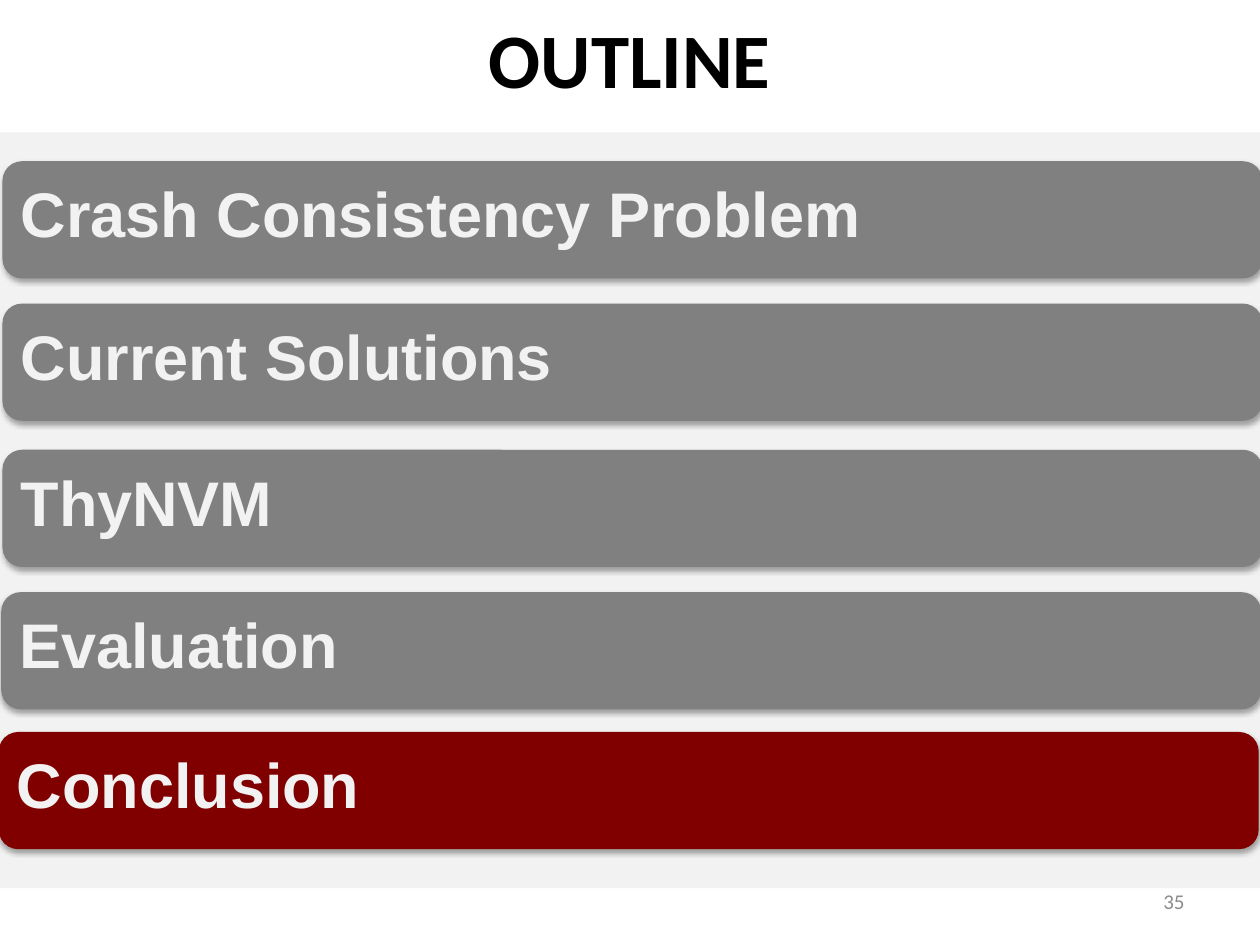
from lxml.etree import SubElement
from pptx import Presentation
from pptx.dml.color import RGBColor
from pptx.enum.shapes import MSO_SHAPE
from pptx.enum.text import MSO_ANCHOR, PP_ALIGN
from pptx.oxml.ns import qn
from pptx.util import Inches, Pt

BLACK = RGBColor(0x00, 0x00, 0x00)
PALE_GRAY = RGBColor(0xF2, 0xF2, 0xF2)
MID_GRAY = RGBColor(0x80, 0x80, 0x80)
NUMBER_GRAY = RGBColor(0x8C, 0x8C, 0x8C)
DARK_RED = RGBColor(0x80, 0x00, 0x00)

SLIDE_WIDTH = 10
BAR_HEIGHT = 0.93

# Topic, left, top, fill
TOPICS = [
    ("Crash Consistency Problem", 0.02, 1.28, MID_GRAY),
    ("Current Solutions", 0.02, 2.41, MID_GRAY),
    ("ThyNVM", 0.02, 3.57, MID_GRAY),
    ("Evaluation", 0.01, 4.7, MID_GRAY),
    ("Conclusion", -0.01, 5.81, DARK_RED),
]


def write_text(shape, text, font_name, size, color, align, bold=False):
    frame = shape.text_frame
    frame.word_wrap = True
    frame.vertical_anchor = MSO_ANCHOR.MIDDLE
    paragraph = frame.paragraphs[0]
    paragraph.text = text
    paragraph.alignment = align
    paragraph.font.name = font_name
    paragraph.font.size = Pt(size)
    paragraph.font.bold = bold
    paragraph.font.color.rgb = color
    return paragraph


def add_label(slide, text, left, top, width, height, **style):
    label = slide.shapes.add_textbox(
        Inches(left), Inches(top), Inches(width), Inches(height))
    write_text(label, text, "Calibri", **style)


def add_block(slide, preset, left, top, height, color):
    block = slide.shapes.add_shape(
        preset, Inches(left), Inches(top), Inches(SLIDE_WIDTH), Inches(height))
    block.shadow.inherit = False
    block.fill.solid()
    block.fill.fore_color.rgb = color
    block.line.fill.background()
    return block


def add_soft_shadow(shape):
    effects = shape._element.spPr.find(qn("a:effectLst"))
    shadow = SubElement(
        effects, qn("a:outerShdw"), blurRad=str(Pt(3.1)), dist=str(Pt(1.8)),
        dir="5400000", rotWithShape="0")
    shadow_color = SubElement(shadow, qn("a:srgbClr"), val=str(BLACK))
    SubElement(shadow_color, qn("a:alpha"), val="35000")


def add_topic_bar(slide, topic, left, top, color):
    bar = add_block(slide, MSO_SHAPE.ROUNDED_RECTANGLE, left, top, BAR_HEIGHT, color)
    add_soft_shadow(bar)
    paragraph = write_text(bar, topic, "Arial", 36, PALE_GRAY, PP_ALIGN.LEFT, bold=True)
    paragraph.line_spacing = 0.8


def main():
    presentation = Presentation()
    presentation.slide_width = Inches(SLIDE_WIDTH)
    presentation.slide_height = Inches(7.5)
    slide = presentation.slides.add_slide(presentation.slide_layouts[6])

    # Backdrop panel, title and page number
    add_block(slide, MSO_SHAPE.RECTANGLE, 0, 1.05, 6, PALE_GRAY)
    add_label(slide, "OUTLINE", 0, -0.17, SLIDE_WIDTH, 1.25,
              size=44, color=BLACK, align=PP_ALIGN.CENTER, bold=True)
    add_label(slide, "35", 7.17, 6.95, 2.33, 0.4,
              size=12, color=NUMBER_GRAY, align=PP_ALIGN.RIGHT)

    # Outline topics, the current one in red
    for topic, left, top, color in TOPICS:
        add_topic_bar(slide, topic, left, top, color)

    presentation.save("out.pptx")


if __name__ == "__main__":
    main()
